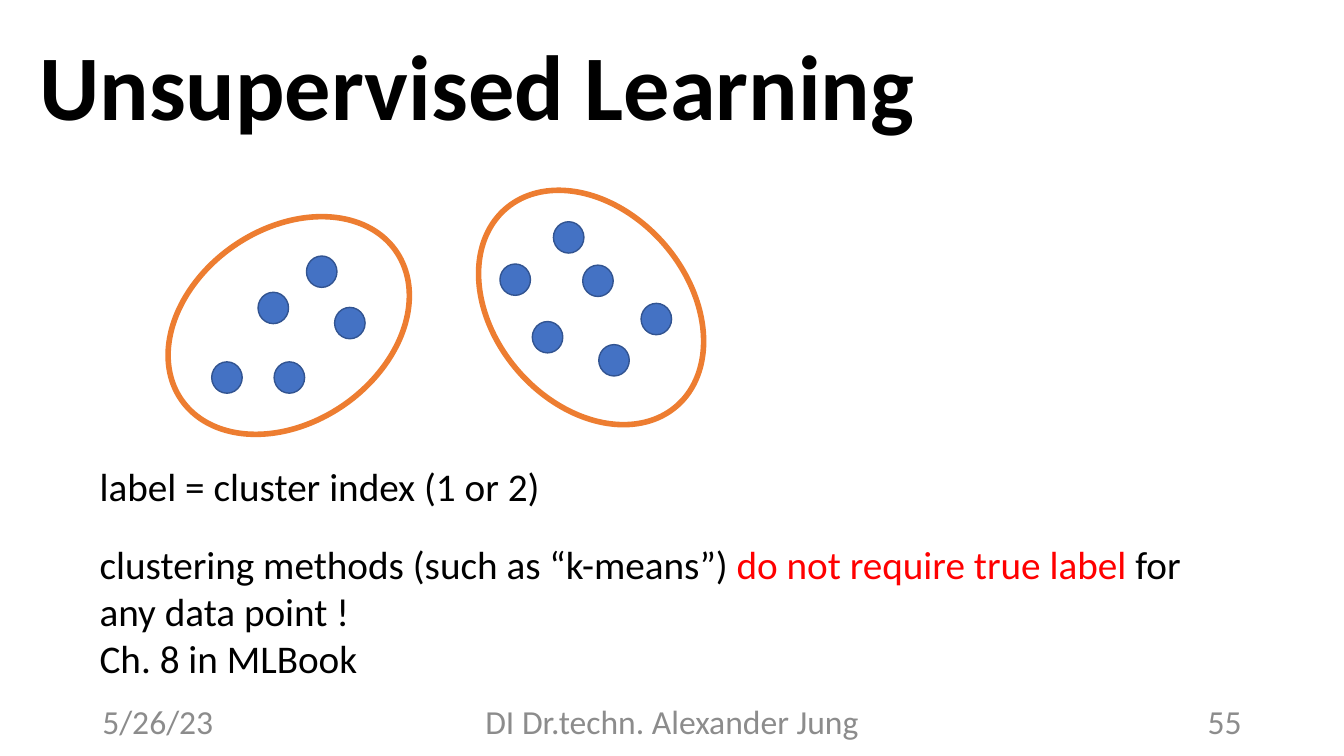
import pptx
import pptx.util
import pptx.dml.color
import pptx.enum.shapes
import pptx.enum.text

Pt = pptx.util.Pt
ALIGN = pptx.enum.text.PP_ALIGN
ANCHOR = pptx.enum.text.MSO_ANCHOR
OVAL = pptx.enum.shapes.MSO_SHAPE.OVAL
COLORS = {"text": "000000", "accent": "FF0000", "footer": "8C8C8C",
          "point": "4472C4", "point_edge": "325491", "cluster": "ED7D31"}


def rgb(name):
    return pptx.dml.color.RGBColor.from_string(COLORS[name])


def add_text(paragraph, text, size=28, color="text", bold=False, align=ALIGN.LEFT):
    paragraph.alignment = align
    run = paragraph.add_run()
    run.text = text
    run.font.name = "Calibri"
    run.font.size = Pt(size)
    run.font.bold = bold
    run.font.color.rgb = rgb(color)


deck = pptx.Presentation()
deck.slide_width, deck.slide_height = Pt(960), Pt(540)
slide = deck.slides.add_slide(deck.slide_layouts[5])

title = slide.shapes.title
title.left, title.top, title.width, title.height = Pt(20.9), Pt(7.9), Pt(932.4), Pt(113)
title.text_frame.vertical_anchor = ANCHOR.MIDDLE
title.text_frame.word_wrap = True
heading = title.text_frame.paragraphs[0]
heading.line_spacing = 0.9
add_text(heading, "Unsupervised Learning", size=66, bold=True)

data_points = [
    (184.3, 208.8), (151.2, 258.5), (195.8, 258.5), (239, 219.6), (218.9, 182.9),
    (357.1, 188.6), (380.2, 229.7), (416.2, 189.4), (427.7, 246.2), (395.3, 158.4),
    (457.9, 216.7),
]
for left, top in data_points:
    point = slide.shapes.add_shape(OVAL, Pt(left), Pt(top), Pt(21.8), Pt(22.4))
    point.shadow.inherit = False
    point.fill.solid()
    point.fill.fore_color.rgb = rgb("point")
    point.line.color.rgb = rgb("point_edge")
    point.line.width = Pt(1)

for left, top, angle in [(113, 163.4, 325.3), (329, 150.5, 229)]:
    cluster = slide.shapes.add_shape(OVAL, Pt(left), Pt(top), Pt(186.5), Pt(138.2))
    cluster.shadow.inherit = False
    cluster.rotation = angle
    cluster.fill.background()
    cluster.line.color.rgb = rgb("cluster")
    cluster.line.width = Pt(4)

explanation = slide.shapes.add_textbox(Pt(64.1), Pt(326.9), Pt(802), Pt(164.9)).text_frame
explanation.word_wrap = False
explanation.auto_size = pptx.enum.text.MSO_AUTO_SIZE.SHAPE_TO_FIT_TEXT
statements = [
    (0, [("label = cluster index (1 or 2)", "text")]),
    (22, [("clustering methods (such as “k-means”) ", "text"),
          ("do not require true label ", "accent"), ("for", "text")]),
    (0, [("any data point !", "text")]),
    (0, [("Ch. 8 in MLBook", "text")]),
]
for index, (gap, phrases) in enumerate(statements):
    statement = explanation.add_paragraph() if index else explanation.paragraphs[0]
    statement.space_before = Pt(gap)
    for phrase, color in phrases:
        add_text(statement, phrase, color=color)

footers = [
    ("5/26/23", 66, 216, ALIGN.LEFT),
    ("DI Dr.techn. Alexander Jung", 318, 324, ALIGN.CENTER),
    ("55", 678, 216, ALIGN.RIGHT),
]
for text, left, width, align in footers:
    footer = slide.shapes.add_textbox(Pt(left), Pt(500.5), Pt(width), Pt(28.75)).text_frame
    footer.word_wrap = True
    footer.vertical_anchor = ANCHOR.MIDDLE
    add_text(footer.paragraphs[0], text, size=24, color="footer", align=align)

deck.save("out.pptx")
